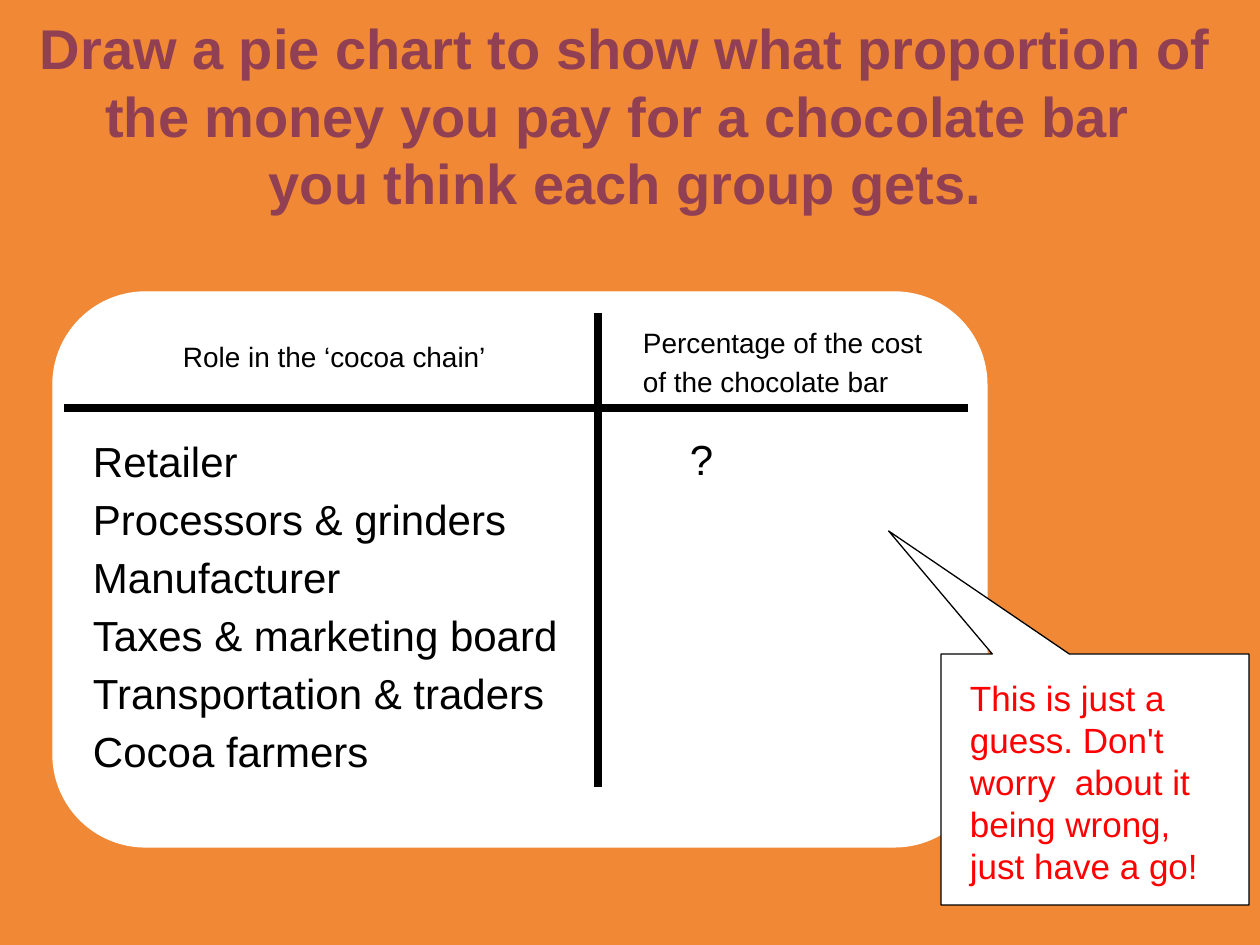
from dataclasses import dataclass

from lxml.etree import SubElement
from pptx import Presentation
from pptx.dml.color import RGBColor
from pptx.enum.shapes import MSO_CONNECTOR, MSO_SHAPE
from pptx.enum.text import PP_ALIGN
from pptx.oxml.ns import qn
from pptx.util import Emu, Pt

PX_PER_INCH = 126


def px(length):
    return Emu(round(length * 914400 / PX_PER_INCH))


@dataclass(frozen=True)
class Theme:
    font: str = "Arial"
    background: str = "F18835"
    panel: str = "FFFFFF"
    ink: str = "000000"
    title: str = "913F53"
    hint: str = "FF0000"
    title_size: int = 32
    body_size: int = 24
    hint_size: int = 20
    heading_size: int = 16
    outline: float = 0.75
    rule: float = 4.5
    table_spacing: float = 1.15


class SlideBuilder:
    def __init__(self, slide, theme):
        self.slide = slide
        self.theme = theme

    def background(self):
        fill = self.slide.background.fill
        fill.solid()
        fill.fore_color.rgb = RGBColor.from_string(self.theme.background)

    def panel(self, preset, box, line_color, adjustments):
        panel = self.slide.shapes.add_shape(preset, *map(px, box))
        panel.shadow.inherit = False
        for index, value in enumerate(adjustments):
            panel.adjustments[index] = value
        panel.fill.solid()
        panel.fill.fore_color.rgb = RGBColor.from_string(self.theme.panel)
        panel.line.color.rgb = RGBColor.from_string(line_color)
        panel.line.width = Pt(self.theme.outline)

    def text(self, lines, box, size, color, bold=False, align=PP_ALIGN.LEFT, spacing=None):
        frame = self.slide.shapes.add_textbox(*map(px, box)).text_frame
        frame.word_wrap = True
        frame.margin_left = frame.margin_right = px(10)
        frame.margin_top = frame.margin_bottom = px(5)
        frame.text = "\n".join(lines)
        for paragraph in frame.paragraphs:
            paragraph.alignment = align
            if spacing:
                paragraph.line_spacing = spacing
            font = paragraph.font
            font.name = self.theme.font
            font.size = Pt(size)
            font.bold = bold
            font.color.rgb = RGBColor.from_string(color)

    def table_text(self, lines, box, size):
        self.text(lines, box, size, self.theme.ink, spacing=self.theme.table_spacing)

    def rule(self, start, end):
        rule = self.slide.shapes.add_connector(
            MSO_CONNECTOR.STRAIGHT, *map(px, (*start, *end)))
        rule.line.color.rgb = RGBColor.from_string(self.theme.ink)
        rule.line.width = Pt(self.theme.rule)
        SubElement(rule._element.spPr, qn("a:effectLst"))


def main():
    theme = Theme()
    deck = Presentation()
    deck.slide_width, deck.slide_height = px(1260), px(945)
    page = SlideBuilder(deck.slides.add_slide(deck.slide_layouts[6]), theme)
    page.background()

    # White card and speech callout
    page.panel(MSO_SHAPE.ROUNDED_RECTANGLE, (53, 292, 934, 555), theme.panel, [0.167])
    page.panel(MSO_SHAPE.RECTANGULAR_CALLOUT, (941, 654, 308, 251), theme.ink, [-0.67, -0.99])

    # Question
    page.text(
        ["Draw a pie chart to show what proportion of the money you pay for a chocolate bar ",
         "you think each group gets."],
        (0, 9, 1251, 213), theme.title_size, theme.title, bold=True, align=PP_ALIGN.CENTER)

    # Column headings
    page.table_text(["Role in the ‘cocoa chain’"], (173, 330, 359, 49), theme.heading_size)
    page.table_text(["Percentage of the cost of the chocolate bar"],
                    (633, 316, 303, 88), theme.heading_size)

    # Roles and the share to guess
    roles = ["Retailer", "Processors & grinders", "Manufacturer",
             "Taxes & marketing board", "Transportation & traders", "Cocoa farmers"]
    page.table_text(roles, (83, 423, 507, 360), theme.body_size)
    page.table_text(["?"], (680, 421, 199, 68), theme.body_size)

    # Column and heading rules
    page.rule((598, 313), (598, 787))
    page.rule((64, 408), (968, 408))

    # Callout message
    page.text(["This is just a guess. Don't worry  about it being wrong, just have a go!"],
              (960, 671, 265, 222), theme.hint_size, theme.hint)

    deck.save("out.pptx")


if __name__ == "__main__":
    main()
